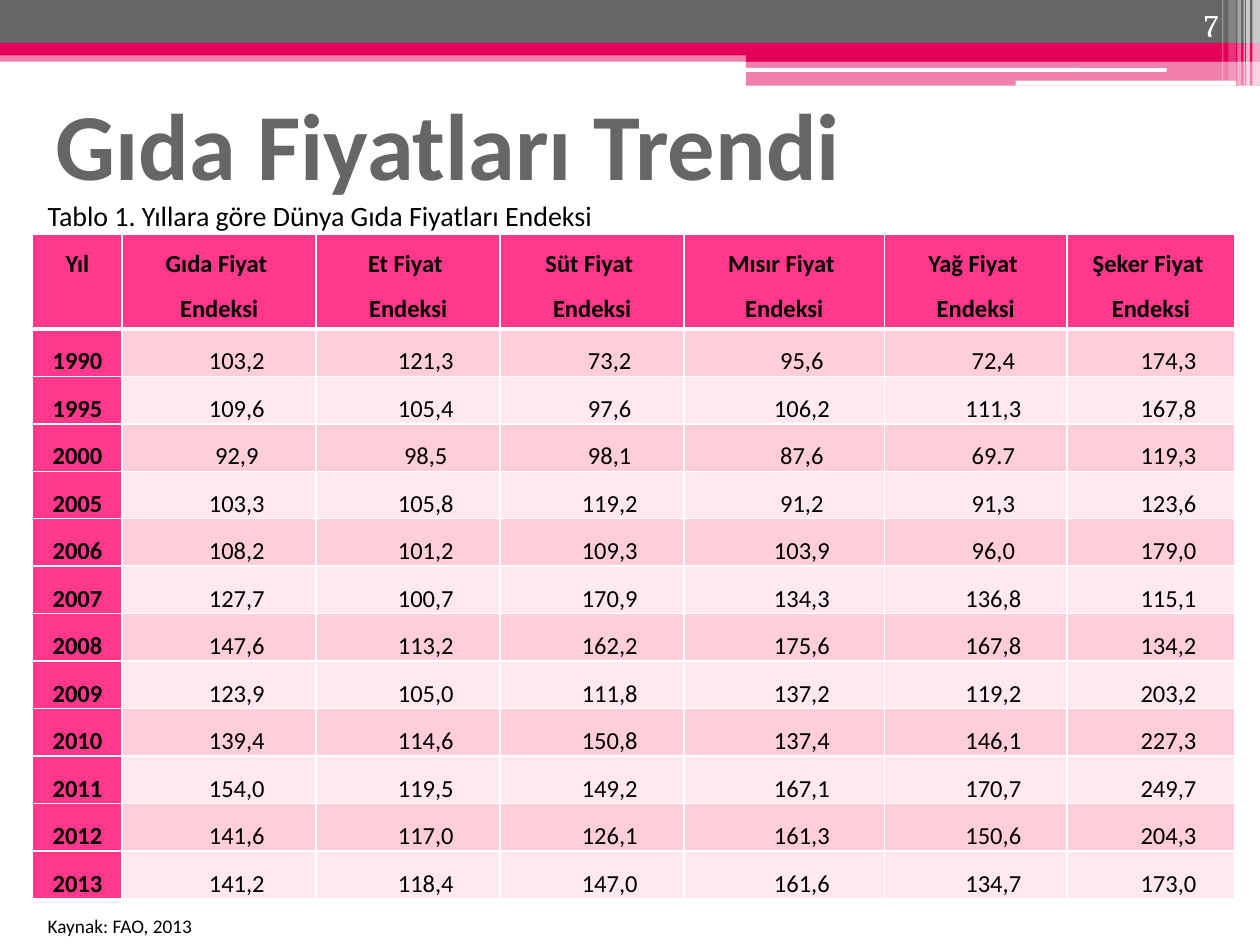
from pptx import Presentation
from pptx.dml.color import RGBColor
from pptx.enum.shapes import MSO_SHAPE
from pptx.enum.text import MSO_ANCHOR, PP_ALIGN
from pptx.oxml.ns import qn
from pptx.util import Inches, Pt
from lxml import etree

RECT, ROUND = MSO_SHAPE.RECTANGLE, MSO_SHAPE.ROUNDED_RECTANGLE
TOP, MIDDLE, BOTTOM = MSO_ANCHOR.TOP, MSO_ANCHOR.MIDDLE, MSO_ANCHOR.BOTTOM
LEFT, CENTER, RIGHT = PP_ALIGN.LEFT, PP_ALIGN.CENTER, PP_ALIGN.RIGHT
TITLE_ONLY = 5
COLS, ROWS = 100, 75

GREY, CRIMSON, WHITE, BLACK = "666666", "E40059", "FFFFFF", "000000"
PINK, BAND_DARK, BAND_LIGHT = "FF388C", "FFCEDA", "FFE8EE"

# left, top, width, height in grid units, colour, opacity in percent
BANDS = [
    (0, 4, 100, 0.9, CRIMSON, 50),
    (0, 0, 100, 3.4, GREY, 100),
    (0, 3.4, 100, 1, CRIMSON, 100),
    (59.2, 3.9, 40.8, 1, CRIMSON, 100),
    (59.2, 4.8, 40.8, 2, CRIMSON, 50),
]
SLOTS = [(59.1, 5.4, 33.5, 0.3), (80.6, 6.4, 17.5, 0.4)]
# left, width, height, opacity
STRIPES = [
    (99.4, 0.6, 6.8, 65), (98.9, 0.3, 6.8, 65), (98.7, 0.1, 6.8, 60),
    (98.2, 0.3, 6.8, 40), (97.5, 0.6, 6.4, 20), (97, 0.1, 6.4, 30),
]

HEADINGS = ["Yıl"] + [f"{food} Fiyat \nEndeksi" for food in
                      ("Gıda", "Et", "Süt", "Mısır", "Yağ", "Şeker")]
PRICES = """
1990 103,2 121,3 73,2 95,6 72,4 174,3
1995 109,6 105,4 97,6 106,2 111,3 167,8
2000 92,9 98,5 98,1 87,6 69.7 119,3
2005 103,3 105,8 119,2 91,2 91,3 123,6
2006 108,2 101,2 109,3 103,9 96,0 179,0
2007 127,7 100,7 170,9 134,3 136,8 115,1
2008 147,6 113,2 162,2 175,6 167,8 134,2
2009 123,9 105,0 111,8 137,2 119,2 203,2
2010 139,4 114,6 150,8 137,4 146,1 227,3
2011 154,0 119,5 149,2 167,1 170,7 249,7
2012 141,6 117,0 126,1 161,3 150,6 204,3
2013 141,2 118,4 147,0 161,6 134,7 173,0
"""
COL_WIDTHS = [7.1, 15.4, 14.6, 14.6, 15.9, 14.5, 13.3]
HEADER_HEIGHT, ROW_HEIGHT = 7.5, 3.77


def rgb(color):
    return RGBColor.from_string(color)


def apply(obj, **values):
    for name, value in values.items():
        setattr(obj, name, value)


class Deck:
    """Holds the style and the current slide; lengths are grid units."""

    def __init__(self, font="Calibri"):
        self.font = font
        self.prs = Presentation()
        apply(self.prs, slide_width=Inches(10), slide_height=Inches(7.5))
        self.col = self.prs.slide_width / COLS
        self.row = self.prs.slide_height / ROWS
        self.s = self.prs.slides.add_slide(self.prs.slide_layouts[TITLE_ONLY])

    def box(self, left, top, width, height):
        return [int(n * unit) for n, unit in
                zip((left, top, width, height), (self.col, self.row) * 2)]

    def add_text(self, tf, text, size, color=BLACK, bold=False, font=None,
                 align=LEFT, spacing=None, indent=0):
        for i, line in enumerate(text.split("\n")):
            p = tf.add_paragraph() if i else tf.paragraphs[0]
            apply(p, alignment=align, line_spacing=spacing)
            if indent:
                pPr = p._p.get_or_add_pPr()
                pPr.set("marL", "0")
                pPr.set("indent", str(int(indent * self.col)))
            r = p.add_run()
            r.text = line
            apply(r.font, name=font or self.font, size=Pt(size), bold=bold)
            r.font.color.rgb = rgb(color)

    def band(self, left, top, width, height, color, opacity=100, kind=RECT):
        sp = self.s.shapes.add_shape(kind, *self.box(left, top, width, height))
        sp.shadow.inherit = False
        sp.fill.solid()
        sp.fill.fore_color.rgb = rgb(color)
        sp.line.fill.background()
        if opacity < 100:
            clr = sp._element.spPr.find(".//" + qn("a:srgbClr"))
            etree.SubElement(clr, qn("a:alpha"), val=str(opacity * 1000))

    def title(self, text, place, **style):
        sp = self.s.shapes.title
        self.s.shapes._spTree.append(sp._element)  # in front of the bands
        apply(sp, **dict(zip(("left", "top", "width", "height"), self.box(*place))))
        sp.text_frame.vertical_anchor = MIDDLE
        self.add_text(sp.text_frame, text, **style)

    def label(self, text, place, anchor=TOP, **style):
        tf = self.s.shapes.add_textbox(*self.box(*place)).text_frame
        apply(tf, word_wrap=True, vertical_anchor=anchor)
        self.add_text(tf, text, **style)

    def cell(self, cell, text, fill, anchor, bottom_line=1, **style):
        margin = Inches(0.04)
        apply(cell, margin_left=margin, margin_right=margin, margin_top=0,
              margin_bottom=0, vertical_anchor=anchor)
        tcPr = cell._tc.get_or_add_tcPr()
        for side, width in zip("LRTB", (1, 1, 1, bottom_line)):
            ln = etree.SubElement(tcPr, qn(f"a:ln{side}"), w=str(Pt(width)))
            solid = etree.SubElement(ln, qn("a:solidFill"))
            etree.SubElement(solid, qn("a:srgbClr"), val=WHITE)
        cell.fill.solid()
        cell.fill.fore_color.rgb = rgb(fill)
        self.add_text(cell.text_frame, text, size=14, align=CENTER, spacing=1.5, **style)

    def table(self, left, top, headings, rows):
        height = HEADER_HEIGHT + ROW_HEIGHT * len(rows)
        place = self.box(left, top, sum(COL_WIDTHS), height)
        tbl = self.s.shapes.add_table(len(rows) + 1, len(headings), *place).table
        for column, width in zip(tbl.columns, COL_WIDTHS):
            column.width = int(width * self.col)
        for i, row in enumerate(tbl.rows):
            row.height = int((ROW_HEIGHT if i else HEADER_HEIGHT) * self.row)
        for j, heading in enumerate(headings):
            self.cell(tbl.cell(0, j), heading, PINK, TOP, bottom_line=3, bold=True)
        for i, (year, *values) in enumerate(rows, 1):
            self.cell(tbl.cell(i, 0), year, PINK, BOTTOM, bold=True)
            for j, value in enumerate(values, 1):
                self.cell(tbl.cell(i, j), value, BAND_DARK if i % 2 else BAND_LIGHT,
                          BOTTOM, indent=2.8)


def main():
    deck = Deck()
    for band in BANDS:
        deck.band(*band)
    for slot in SLOTS:
        deck.band(*slot, WHITE, kind=ROUND)
    for left, width, height, opacity in STRIPES:
        deck.band(left, 0, width, height, WHITE, opacity)
    deck.title("Gıda Fiyatları Trendi", (3.4, 5.5, 90, 11.7),
               size=54, color=GREY, bold=True)
    deck.table(2.6, 18.6, HEADINGS,
               [line.split() for line in PRICES.strip().splitlines()])
    deck.label("Kaynak: FAO, 2013", (2.8, 72.1, 45.7, 2.9), size=11)
    deck.label("Tablo 1. Yıllara göre Dünya Gıda Fiyatları Endeksi",
               (2.8, 15.3, 66.1, 3.7), size=16)
    deck.label("7", (89.4, 0, 8.3, 4), anchor=BOTTOM, size=18, color=WHITE,
               font="Cambria", align=RIGHT)
    deck.prs.save("out.pptx")


if __name__ == "__main__":
    main()
